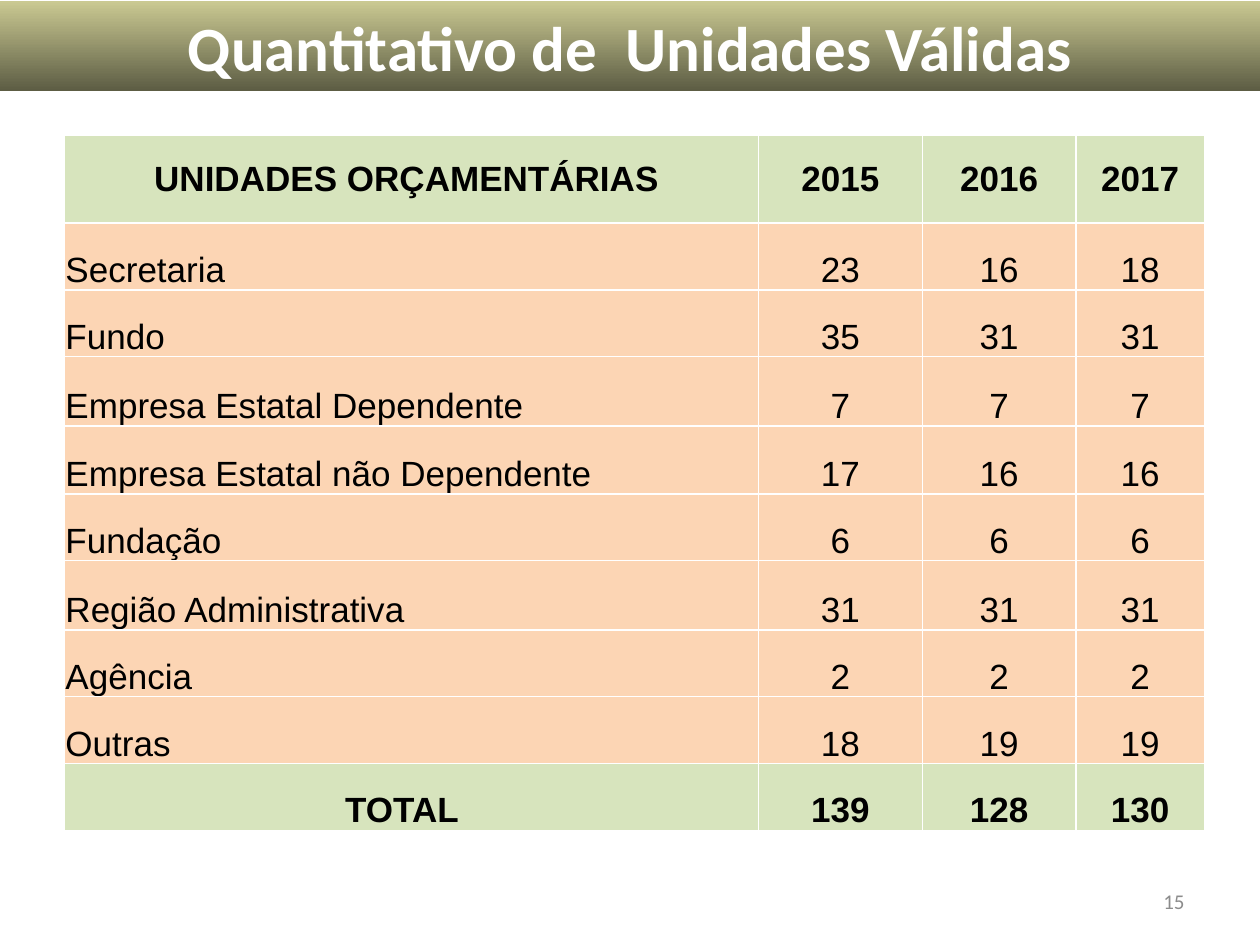
from lxml import etree
from pptx import Presentation
from pptx.dml.color import RGBColor
from pptx.enum.shapes import MSO_SHAPE
from pptx.enum.text import MSO_ANCHOR, PP_ALIGN
from pptx.oxml.ns import qn
from pptx.util import Inches, Pt

RECT = MSO_SHAPE.RECTANGLE
MIDDLE, BOTTOM = MSO_ANCHOR.MIDDLE, MSO_ANCHOR.BOTTOM
LEFT, CENTER, RIGHT = PP_ALIGN.LEFT, PP_ALIGN.CENTER, PP_ALIGN.RIGHT

COLORS = {
    "white": "FFFFFF",
    "black": "000000",
    "number": "8C8C8C",
    "bar_top": "CAC992",
    "bar_bottom": "5D5D44",
    "green": "D7E4BD",
    "peach": "FCD5B4",
}

TITLE_FONT = {"name": "Calibri", "size": Pt(36), "bold": True}
NUMBER_FONT = {"name": "Calibri", "size": Pt(12)}
CELL_FONT = {"name": "Arial", "size": Pt(20)}
CELL_MARGINS = {
    "margin_left": Inches(0.01),
    "margin_top": Inches(0.01),
    "margin_right": Inches(0.01),
    "margin_bottom": 0,
}

COL_WIDTHS = [5.51, 1.3, 1.22, 1.02]
ROW_HEIGHTS = [0.7, 0.53, 0.53, 0.55, 0.54, 0.53, 0.55, 0.53, 0.53, 0.53]
ROWS = [
    ("UNIDADES ORÇAMENTÁRIAS ", 2015, 2016, 2017),
    ("Secretaria", 23, 16, 18),
    ("Fundo", 35, 31, 31),
    ("Empresa Estatal Dependente", 7, 7, 7),
    ("Empresa Estatal não Dependente", 17, 16, 16),
    ("Fundação", 6, 6, 6),
    ("Região Administrativa", 31, 31, 31),
    ("Agência", 2, 2, 2),
    ("Outras", 18, 19, 19),
    ("TOTAL  ", 139, 128, 130),
]


def rgb(name):
    return RGBColor.from_string(COLORS[name])


def set_attrs(obj, values):
    for name, value in values.items():
        setattr(obj, name, value)


def write_text(tf, text, font, color, align):
    p = tf.paragraphs[0]
    p.alignment = align
    r = p.add_run()
    r.text = text
    set_attrs(r.font, font)
    r.font.color.rgb = rgb(color)


def add_title_bar(slide, text):
    sp = slide.shapes.add_shape(RECT, 0, Inches(0.01), Inches(10), Inches(0.71))
    sp.shadow.inherit = False
    sp.line.fill.background()
    sp.fill.gradient()
    sp.fill.gradient_angle = 270
    for stop, color in zip(sp.fill.gradient_stops, ("bar_top", "bar_bottom")):
        stop.color.rgb = rgb(color)
    tf = sp.text_frame
    set_attrs(tf, {"word_wrap": True, "vertical_anchor": MIDDLE})
    write_text(tf, text, TITLE_FONT, "white", CENTER)


def add_slide_number(slide, text):
    box = slide.shapes.add_textbox(Inches(7.17), Inches(6.95), Inches(2.33), Inches(0.4))
    tf = box.text_frame
    set_attrs(tf, {"word_wrap": True, "vertical_anchor": MIDDLE})
    write_text(tf, text, NUMBER_FONT, "number", RIGHT)


def set_borders(cell, color, width):
    """Draw all four sides; must run before the cell is filled."""
    tc_pr = cell._tc.get_or_add_tcPr()
    for side in ("lnL", "lnR", "lnT", "lnB"):
        ln = etree.SubElement(tc_pr, qn(f"a:{side}"), w=str(width))
        fill = etree.SubElement(ln, qn("a:solidFill"))
        etree.SubElement(fill, qn("a:srgbClr"), val=COLORS[color])


def format_cell(cell, text, fill, bold, align, anchor):
    set_borders(cell, "white", Pt(1))
    cell.fill.solid()
    cell.fill.fore_color.rgb = rgb(fill)
    set_attrs(cell, {**CELL_MARGINS, "vertical_anchor": anchor})
    write_text(cell.text_frame, text, {**CELL_FONT, "bold": bold}, "black", align)


def add_units_table(slide):
    table = slide.shapes.add_table(
        len(ROWS), len(COL_WIDTHS), Inches(0.51), Inches(1.07),
        Inches(sum(COL_WIDTHS)), Inches(sum(ROW_HEIGHTS)),
    ).table
    for col, width in zip(table.columns, COL_WIDTHS):
        col.width = Inches(width)
    for row, height in zip(table.rows, ROW_HEIGHTS):
        row.height = Inches(height)
    for i, values in enumerate(ROWS):
        strong = i in (0, len(ROWS) - 1)
        fill = "green" if strong else "peach"
        anchor = MIDDLE if i == 0 else BOTTOM
        for j, value in enumerate(values):
            align = LEFT if j == 0 and not strong else CENTER
            format_cell(table.cell(i, j), str(value), fill, strong, align, anchor)


def main():
    prs = Presentation()
    prs.slide_width, prs.slide_height = Inches(10), Inches(7.5)
    slide = prs.slides.add_slide(prs.slide_layouts[6])
    add_title_bar(slide, "Quantitativo de  Unidades Válidas")
    add_slide_number(slide, "15")
    add_units_table(slide)
    prs.save("out.pptx")


if __name__ == "__main__":
    main()
